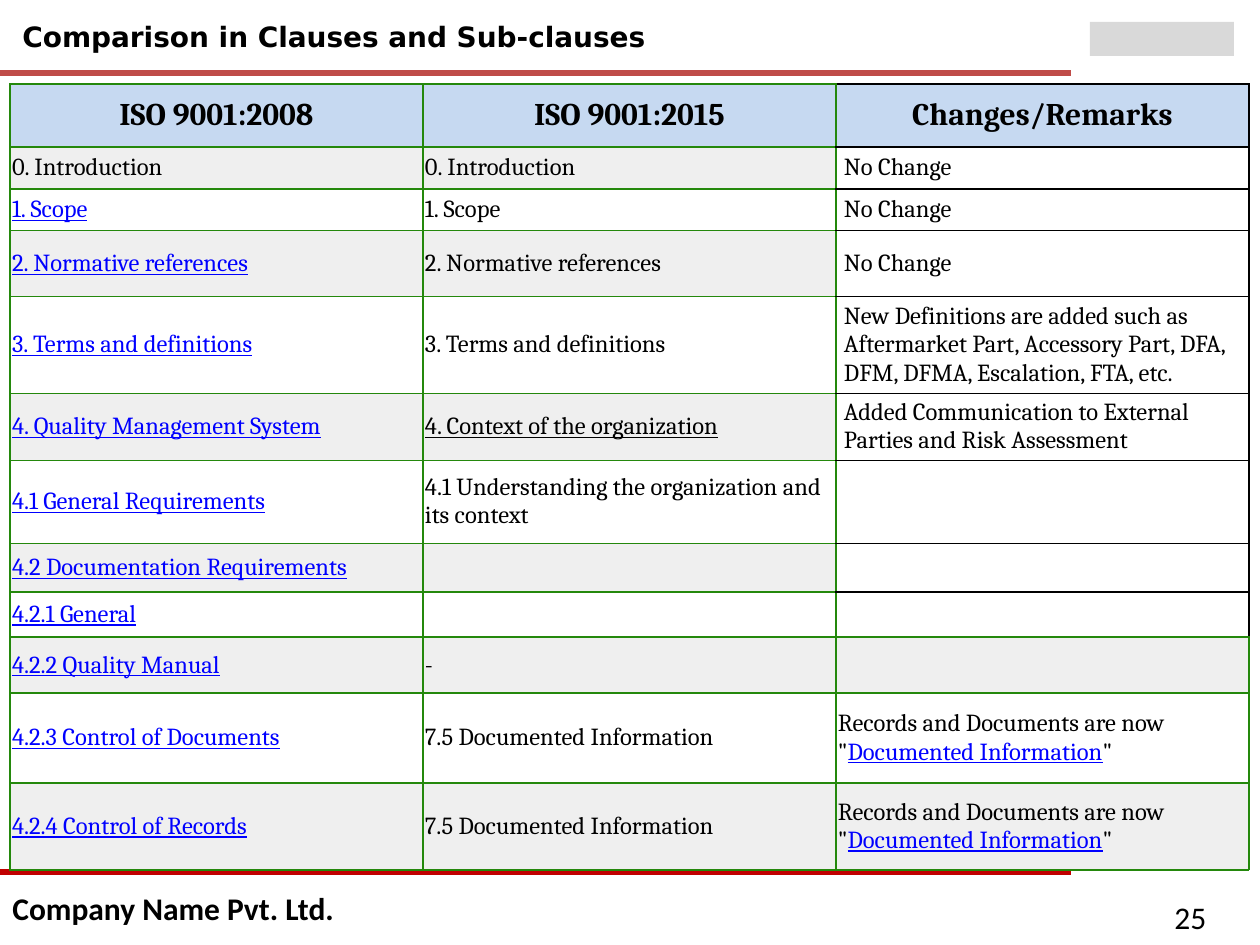
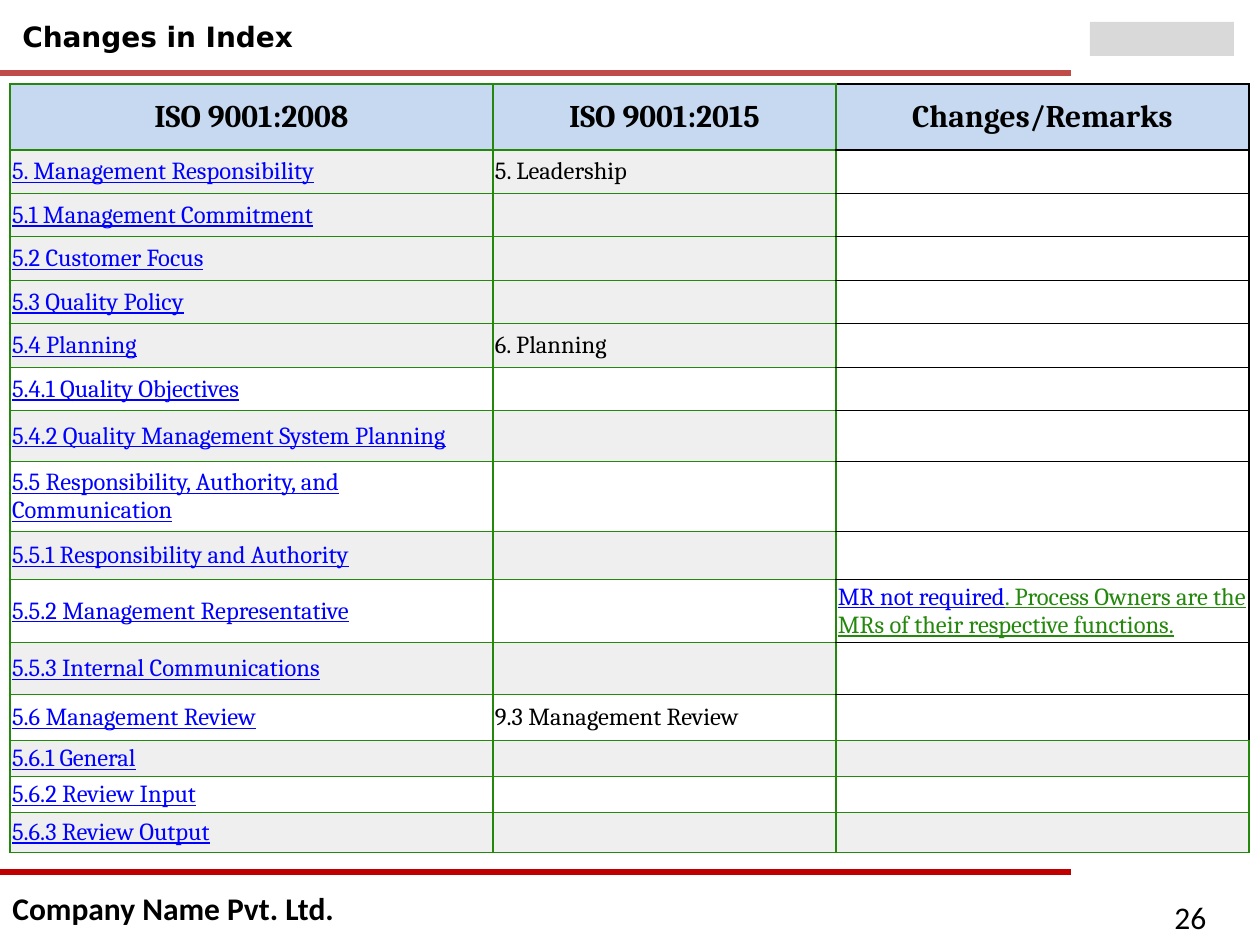
from dataclasses import dataclass
from typing import Any, NamedTuple

from lxml import etree
from pptx import Presentation
from pptx import util as u
from pptx.dml.color import RGBColor
from pptx.enum import shapes, text
from pptx.oxml import ns

SCALE = 914400 / 126


@dataclass(frozen=True)
class Theme:
    ink: str = "000000"
    paper: str = "FFFFFF"
    link: str = "0000FF"
    green: str = "24880C"
    head: str = "C6D9F1"
    band: str = "EFEFEF"
    top: str = "BF4C48"
    foot: str = "C00000"
    mark: str = "D9D9D9"
    title: int = 16
    large: int = 18
    body: int = 14
    sans: str = "DejaVu Sans"
    serif: str = "Cambria"
    plain: str = "Calibri"


T = Theme()


class Bit(NamedTuple):
    text: str
    color: str = T.ink
    under: bool = False


class Row(NamedTuple):
    high: int
    old: str
    new: str | Bit = ""
    note: str | tuple[Bit, ...] = ""
    tint: bool = False
    open: bool = True


class Page(NamedTuple):
    title: str
    wide: int
    num: int
    cols: tuple[int, ...]
    head: int
    rows: list[Row]


class Rule(NamedTuple):
    y: int
    color: str


HEADS = ("ISO 9001:2008", "ISO 9001:2015", "Changes/Remarks")
RULES = (Rule(73, T.top), Rule(872, T.foot))
FIRM = "Company Name Pvt. Ltd."
RECORDS = (
    Bit('Records and Documents are now "'),
    Bit("Documented Information", T.link, True),
    Bit('"'),
)
OWNERS = (
    Bit("MR not required", T.link, True),
    Bit(". Process Owners are the MRs of their respective functions.", T.green, True),
)

PAGES = (
    Page("Comparison in Clauses and Sub-clauses", 788, 25, (413, 413, 413), 63, [
        Row(42, "0. Introduction", "0. Introduction", "No Change", tint=True),
        Row(42, "1. Scope", "1. Scope", "No Change"),
        Row(66, "2. Normative references", "2. Normative references", "No Change", tint=True),
        Row(96, "3. Terms and definitions", "3. Terms and definitions",
            "New Definitions are added such as Aftermarket Part, Accessory Part, "
            "DFA, DFM, DFMA, Escalation, FTA, etc."),
        Row(67, "4. Quality Management System",
            Bit("4. Context of the organization", under=True),
            "Added Communication to External Parties and Risk Assessment", tint=True),
        Row(83, "4.1 General Requirements", "4.1 Understanding the organization and its context"),
        Row(49, "4.2 Documentation Requirements", tint=True),
        Row(45, "4.2.1 General"),
        Row(56, "4.2.2 Quality Manual", "-", tint=True, open=False),
        Row(90, "4.2.3 Control of Documents", "7.5 Documented Information", RECORDS, open=False),
        Row(87, "4.2.4 Control of Records", "7.5 Documented Information", RECORDS,
            tint=True, open=False),
    ]),
    Page("Changes in Index", 640, 26, (483, 343, 413), 66, [
        Row(44, "5. Management Responsibility", "5. Leadership", tint=True),
        Row(43, "5.1 Management Commitment", tint=True),
        Row(44, "5.2 Customer Focus", tint=True),
        Row(43, "5.3 Quality Policy", tint=True),
        Row(44, "5.4 Planning", "6. Planning", tint=True),
        Row(43, "5.4.1 Quality Objectives"),
        Row(51, "5.4.2 Quality Management System Planning", tint=True),
        Row(70, "5.5 Responsibility, Authority, and Communication"),
        Row(48, "5.5.1 Responsibility and Authority", tint=True),
        Row(63, "5.5.2 Management Representative", note=OWNERS),
        Row(52, "5.5.3 Internal Communications", tint=True),
        Row(46, "5.6 Management Review", "9.3 Management Review"),
        Row(36, "5.6.1 General", tint=True, open=False),
        Row(36, "5.6.2 Review Input", open=False),
        Row(40, "5.6.3 Review Output", tint=True, open=False),
    ]),
)


def px(n: int) -> u.Emu:
    return u.Emu(round(n * SCALE))


def rgb(code: str) -> RGBColor:
    return RGBColor.from_string(code)


def write(para: Any, *bits: str | Bit, size: int = T.body, font: str = T.serif,
          bold: bool = False, mid: bool = False) -> None:
    para.alignment = text.PP_ALIGN.CENTER if mid else text.PP_ALIGN.LEFT
    for item in bits:
        bit = Bit(item) if isinstance(item, str) else item
        if not bit.text:
            end = etree.SubElement(para._p, ns.qn("a:endParaRPr"))
            end.set("sz", str(size * 100))
            continue
        run = para.add_run()
        run.text = bit.text
        run.font.size = u.Pt(size)
        run.font.name = font
        run.font.bold = bold
        run.font.underline = bit.under
        run.font.color.rgb = rgb(bit.color)


def label(slide: Any, words: str, x: int, y: int, w: int, h: int, **form: Any) -> None:
    frame = slide.shapes.add_textbox(px(x), px(y), px(w), px(h)).text_frame
    frame.word_wrap = True
    frame.vertical_anchor = text.MSO_ANCHOR.MIDDLE
    write(frame.paragraphs[0], words, **form)


def chrome(slide: Any, page: Page) -> None:
    for rule in RULES:
        line = slide.shapes.add_connector(
            shapes.MSO_CONNECTOR.STRAIGHT, 0, px(rule.y), px(1071), px(rule.y))
        line.line.color.rgb = rgb(rule.color)
        line.line.width = u.Pt(3)
        etree.SubElement(line._element.spPr, ns.qn("a:effectLst"))
    mark = slide.shapes.add_shape(
        shapes.MSO_SHAPE.RECTANGLE, px(1090), px(22), px(144), px(34))
    mark.shadow.inherit = False
    mark.fill.solid()
    mark.fill.fore_color.rgb = rgb(T.mark)
    mark.line.fill.background()
    label(slide, FIRM, 0, 892, 357, 32, size=T.large, font=T.plain, bold=True)
    label(slide, str(page.num), 1162, 892, 97, 50, size=T.large, font=T.plain)
    label(slide, page.title, 10, 13, page.wide, 47, size=T.title, font=T.sans, bold=True)


def border(cell: Any, sides: dict[str, str]) -> None:
    props = cell._tc.get_or_add_tcPr()
    for spot, side in enumerate("LRTB"):
        line = etree.Element(ns.qn(f"a:ln{side}"), w=str(u.Pt(0.75)))
        fill = etree.SubElement(line, ns.qn("a:solidFill"))
        etree.SubElement(fill, ns.qn("a:srgbClr"), val=sides[side])
        props.insert(spot, line)


def dress(cell: Any, bits: tuple[str | Bit, ...], fill: str, sides: dict[str, str],
          roomy: bool, **form: Any) -> None:
    cell.margin_left = cell.margin_right = px(8 if roomy else 2)
    cell.margin_top = cell.margin_bottom = px(4 if roomy else 2)
    cell.vertical_anchor = text.MSO_ANCHOR.MIDDLE
    cell.fill.solid()
    cell.fill.fore_color.rgb = rgb(fill)
    border(cell, sides)
    write(cell.text_frame.paragraphs[0], *bits, **form)


def grid(slide: Any, page: Page) -> None:
    highs = [page.head] + [row.high for row in page.rows]
    table = slide.shapes.add_table(
        len(highs), len(HEADS), px(10), px(84), px(sum(page.cols)), px(sum(highs))).table
    for col, wide in zip(table.columns, page.cols):
        col.width = px(wide)
    for line, high in zip(table.rows, highs):
        line.height = px(high)

    green = dict.fromkeys("LRTB", T.green)
    black = dict.fromkeys("RTB", T.ink) | {"L": T.green}
    for at, head in enumerate(HEADS):
        last = at == 2
        dress(table.cell(0, at), (head,), T.head, black if last else green, last,
              size=T.large, bold=True, mid=True)

    for at, row in enumerate(page.rows, 1):
        fill = T.band if row.tint else T.paper
        old = row.old if row.old.startswith("0.") else Bit(row.old, T.link, True)
        rich = isinstance(row.note, tuple)
        note = row.note if rich else (row.note,)
        sides = green
        if row.open:
            edge = not page.rows[at].open
            sides = black | {"B": T.green} if edge else black
        dress(table.cell(at, 0), (old,), fill, green, False)
        dress(table.cell(at, 1), (row.new,), fill, green, False)
        dress(table.cell(at, 2), note, T.paper if row.open else fill, sides,
              row.open and not rich)


def main() -> None:
    deck = Presentation()
    deck.slide_width, deck.slide_height = px(1260), px(945)
    for page in PAGES:
        slide = deck.slides.add_slide(deck.slide_layouts[6])
        chrome(slide, page)
        grid(slide, page)
    deck.save("out.pptx")


if __name__ == "__main__":
    main()
